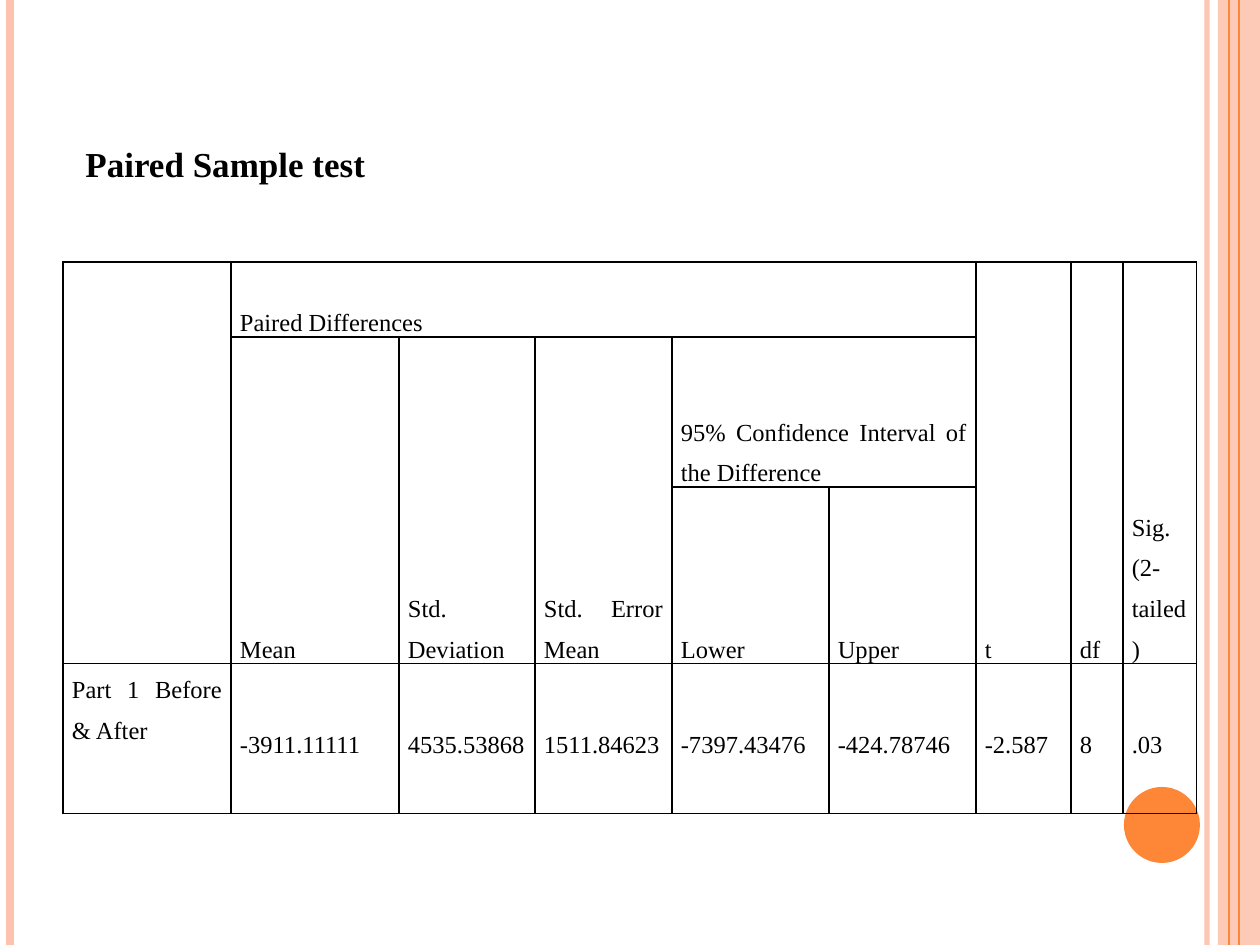
from lxml.etree import SubElement
from pptx import Presentation
from pptx.dml.color import RGBColor
from pptx.enum.shapes import MSO_CONNECTOR, MSO_SHAPE
from pptx.enum.text import MSO_ANCHOR, MSO_AUTO_SIZE, PP_ALIGN
from pptx.oxml import parse_xml
from pptx.oxml.ns import nsdecls, qn
from pptx.util import Emu, Pt

BLACK = RGBColor(0, 0, 0)
ORANGE = RGBColor(0xFE, 0x86, 0x37)
PEACH = RGBColor(0xFE, 0xC3, 0xAE)
FONT = "Times New Roman"


def px(value):
    return Emu(round(value * 914400 / 126))


def set_opacity(fill, percent):
    color = fill._xPr.find(qn("a:solidFill"))[0]
    SubElement(color, qn("a:alpha"), val=str(percent * 1000))


presentation = Presentation()
presentation.slide_width = px(1260)
presentation.slide_height = px(945)
slide = presentation.slides.add_slide(presentation.slide_layouts[6])
shapes = slide.shapes

band = shapes.add_shape(MSO_SHAPE.RECTANGLE, px(1218), 0, px(42), px(945))
circle = shapes.add_shape(MSO_SHAPE.OVAL, px(1124), px(787), px(76), px(76))
for shape, color in ((band, PEACH), (circle, ORANGE)):
    shape.shadow.inherit = False
    shape.fill.solid()
    shape.fill.fore_color.rgb = color
    shape.line.fill.background()
set_opacity(band.fill, 87)

for x, color, width, opacity in (
    (1207, PEACH, 3, 93),
    (10, PEACH, 4.5, 100),
    (1239, ORANGE, 1.5, 100),
    (1229, ORANGE, 0.75, 100),
):
    stripe = shapes.add_connector(MSO_CONNECTOR.STRAIGHT, px(x), 0, px(x), px(945))
    stripe.line.color.rgb = color
    stripe.line.width = Pt(width)
    if opacity < 100:
        set_opacity(stripe.line.fill, opacity)
    SubElement(stripe._element.spPr, qn("a:effectLst"))

title = shapes.add_textbox(px(73), px(136), px(336), px(55))
title.text_frame.word_wrap = True
title.text_frame.auto_size = MSO_AUTO_SIZE.SHAPE_TO_FIT_TEXT
paragraph = title.text_frame.paragraphs[0]
paragraph.text = "Paired Sample test"
paragraph.font.name = FONT
paragraph.font.size = Pt(20)
paragraph.font.bold = True
paragraph.font.color.rgb = BLACK

column_widths = (168, 168, 136, 137, 157, 147, 95, 52, 74)
row_heights = (75, 150, 75, 150)
rows = (
    ("", "Paired Differences", "", "", "", "", "t", "df", "Sig. (2-tailed)"),
    ("", "Mean", "Std. Deviation", "Std. Error Mean",
     "95% Confidence Interval of the Difference", "", "", "", ""),
    ("", "", "", "", "Lower", "Upper", "", "", ""),
    ("Part 1 Before & After", "-3911.11111", "4535.53868", "1511.84623",
     "-7397.43476", "-424.78746", "-2.587", "8", ".03"),
)
table = shapes.add_table(
    len(rows), len(column_widths), px(63), px(262),
    px(sum(column_widths)), px(sum(row_heights)),
).table
table.first_row = False
table.horz_banding = False
for column, width in zip(table.columns, column_widths):
    column.width = px(width)
for row, height in zip(table.rows, row_heights):
    row.height = px(height)

for row_index, texts in enumerate(rows):
    for column_index, text in enumerate(texts):
        cell = table.cell(row_index, column_index)
        cell.margin_left = cell.margin_right = px(9)
        cell.margin_top = cell.margin_bottom = 0
        if row_index < 3:
            cell.vertical_anchor = MSO_ANCHOR.BOTTOM
        elif column_index > 0:
            cell.vertical_anchor = MSO_ANCHOR.MIDDLE
        properties = cell._tc.get_or_add_tcPr()
        for side in ("lnL", "lnR", "lnT", "lnB"):
            properties.append(parse_xml(
                f'<a:{side} {nsdecls("a")} w="{Pt(1)}"><a:solidFill>'
                f'<a:srgbClr val="{BLACK}"/></a:solidFill></a:{side}>'
            ))
        cell.fill.background()
        paragraph = cell.text_frame.paragraphs[0]
        paragraph.text = text
        paragraph.alignment = PP_ALIGN.JUSTIFY
        paragraph.line_spacing = 1.5
        paragraph.font.name = FONT
        paragraph.font.size = Pt(14)
        paragraph.font.color.rgb = BLACK

for top, left, bottom, right in (
    (0, 0, 2, 0), (0, 1, 0, 5), (0, 6, 2, 6), (0, 7, 2, 7), (0, 8, 2, 8),
    (1, 1, 2, 1), (1, 2, 2, 2), (1, 3, 2, 3), (1, 4, 1, 5),
):
    table.cell(top, left).merge(table.cell(bottom, right))

presentation.save("out.pptx")
